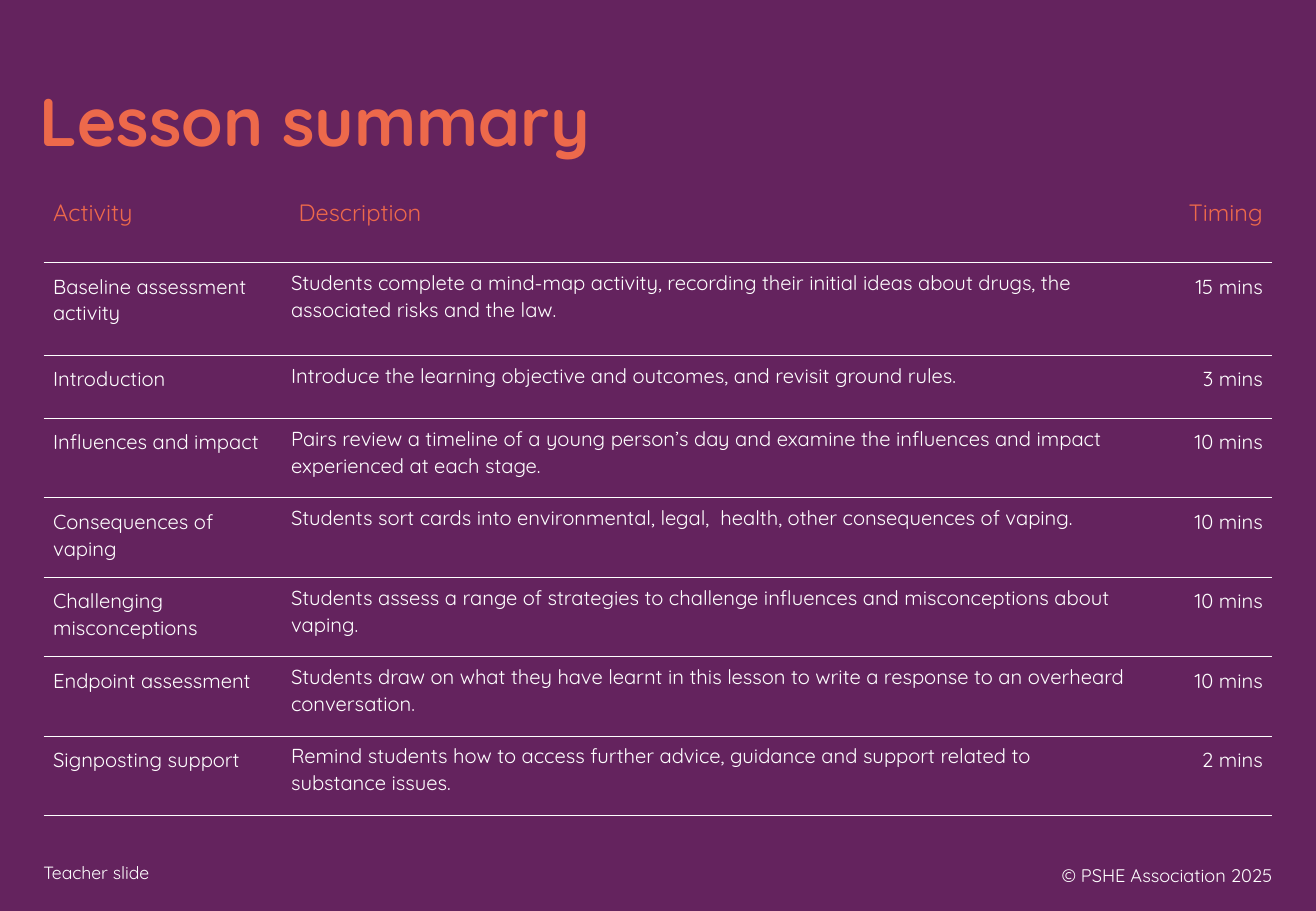
from lxml.etree import SubElement
from pptx import Presentation
from pptx.dml.color import RGBColor
from pptx.enum.text import MSO_ANCHOR as Anchor, MSO_AUTO_SIZE as AutoSize, PP_ALIGN as Align
from pptx.oxml import parse_xml
from pptx.oxml.ns import nsdecls, qn
from pptx.util import Cm, Pt

PURPLE = RGBColor(0x64, 0x23, 0x5E)
ORANGE = RGBColor(0xED, 0x69, 0x4B)
WHITE = RGBColor(0xFF, 0xFF, 0xFF)
FONT = "Quicksand"
NO_STYLE = "{2D5ABB26-0587-4C30-8999-92F81FD0307C}"

HEADINGS = ("Activity", "Description", "Timing")
ACTIVITIES = [
    ("Baseline assessment activity",
     "Students complete a mind-map activity, recording their initial ideas about drugs, "
     "the associated risks and the law.", "15 mins"),
    ("Introduction",
     "Introduce the learning objective and outcomes, and revisit ground rules.", "3 mins"),
    ("Influences and impact",
     "Pairs review a timeline of a young person’s day and examine the influences and impact "
     "experienced at each stage.", "10 mins"),
    ("Consequences of vaping",
     "Students sort cards into environmental, legal,  health, other consequences of vaping.",
     "10 mins"),
    ("Challenging misconceptions",
     "Students assess a range of strategies to challenge influences and misconceptions "
     "about vaping.", "10 mins"),
    ("Endpoint assessment",
     "Students draw on what they have learnt in this lesson to write a response to an "
     "overheard conversation.", "10 mins"),
    ("Signposting support",
     "Remind students how to access further advice, guidance and support related to \v"
     "substance issues.", "2 mins"),
]
COLUMN_WIDTHS = (4.92, 18.11, 2.66)
ROW_HEIGHTS = (1.56, 1.94, 1.32) + (1.66,) * 5
ALIGNMENTS = (Align.LEFT, Align.LEFT, Align.RIGHT)


def style_text(para, size, color, align=Align.LEFT, bold=False):
    para.alignment = align
    para.font.name = FONT
    para.font.size = Pt(size)
    para.font.bold = bold
    para.font.color.rgb = color


def add_title(page, left, top, width, height):
    title = page.shapes.title
    title.left, title.top, title.width, title.height = map(Cm, (left, top, width, height))
    frame = title.text_frame
    frame.text = "Lesson summary"
    frame.auto_size = AutoSize.NONE
    frame.vertical_anchor = Anchor.MIDDLE
    para = frame.paragraphs[0]
    para.line_spacing = 0.9
    style_text(para, 40, ORANGE, bold=True)


def add_footer(page, text, size, left, top, width, height, align, anchor):
    box = page.shapes.add_textbox(Cm(left), Cm(top), Cm(width), Cm(height))
    frame = box.text_frame
    frame.word_wrap = True
    frame.vertical_anchor = anchor
    frame.text = text
    style_text(frame.paragraphs[0], size, WHITE, align)


def underline_cell(cell):
    cell._tc.get_or_add_tcPr().insert(0, parse_xml(
        f'<a:lnB {nsdecls("a")} w="{Pt(0.5)}"><a:solidFill>'
        f'<a:srgbClr val="{WHITE}"/></a:solidFill></a:lnB>'))


def fill_cell(cell, text, column, is_heading):
    cell.text = text
    cell.fill.background()
    para = cell.text_frame.paragraphs[0]
    if not is_heading:
        para.line_spacing = Pt(16)
    style_text(para, 14 if is_heading else 12, ORANGE if is_heading else WHITE,
               ALIGNMENTS[column])
    if is_heading or column != 1:
        cell.margin_left = Cm(0.41 if column == 1 else 0.2)
        cell.margin_right = cell.margin_top = cell.margin_bottom = Cm(0.2)
    underline_cell(cell)


def add_summary_table(page, left, top):
    rows = [HEADINGS] + ACTIVITIES
    frame = page.shapes.add_table(len(rows), len(HEADINGS), Cm(left), Cm(top),
                                  Cm(sum(COLUMN_WIDTHS)), Cm(sum(ROW_HEIGHTS)))
    table = frame.table
    table.horz_banding = False
    properties = table._tbl.tblPr
    for style in properties.findall(qn("a:tableStyleId")):
        properties.remove(style)
    SubElement(properties, qn("a:tableStyleId")).text = NO_STYLE
    for column, width in zip(table.columns, COLUMN_WIDTHS):
        column.width = Cm(width)
    for index, (texts, height) in enumerate(zip(rows, ROW_HEIGHTS)):
        table.rows[index].height = Cm(height)
        for column, text in enumerate(texts):
            fill_cell(table.cell(index, column), text, column, index == 0)


def add_summary_page(deck):
    page = deck.slides.add_slide(deck.slide_layouts[5])
    page.background.fill.solid()
    page.background.fill.fore_color.rgb = PURPLE
    add_title(page, 0.58, 1.65, 20.83, 1.93)
    add_summary_table(page, 0.91, 3.93)
    add_footer(page, "Teacher slide", 10.5, 0.66, 17.9, 17.22, 0.74, Align.LEFT, Anchor.TOP)
    add_footer(page, "© PSHE Association 2025", 10.8, 20.65, 17.8, 6.2, 1.02,
               Align.RIGHT, Anchor.MIDDLE)


def main():
    deck = Presentation()
    deck.slide_width, deck.slide_height = Cm(27.51), Cm(19.05)
    add_summary_page(deck)
    deck.save("out.pptx")


if __name__ == "__main__":
    main()
